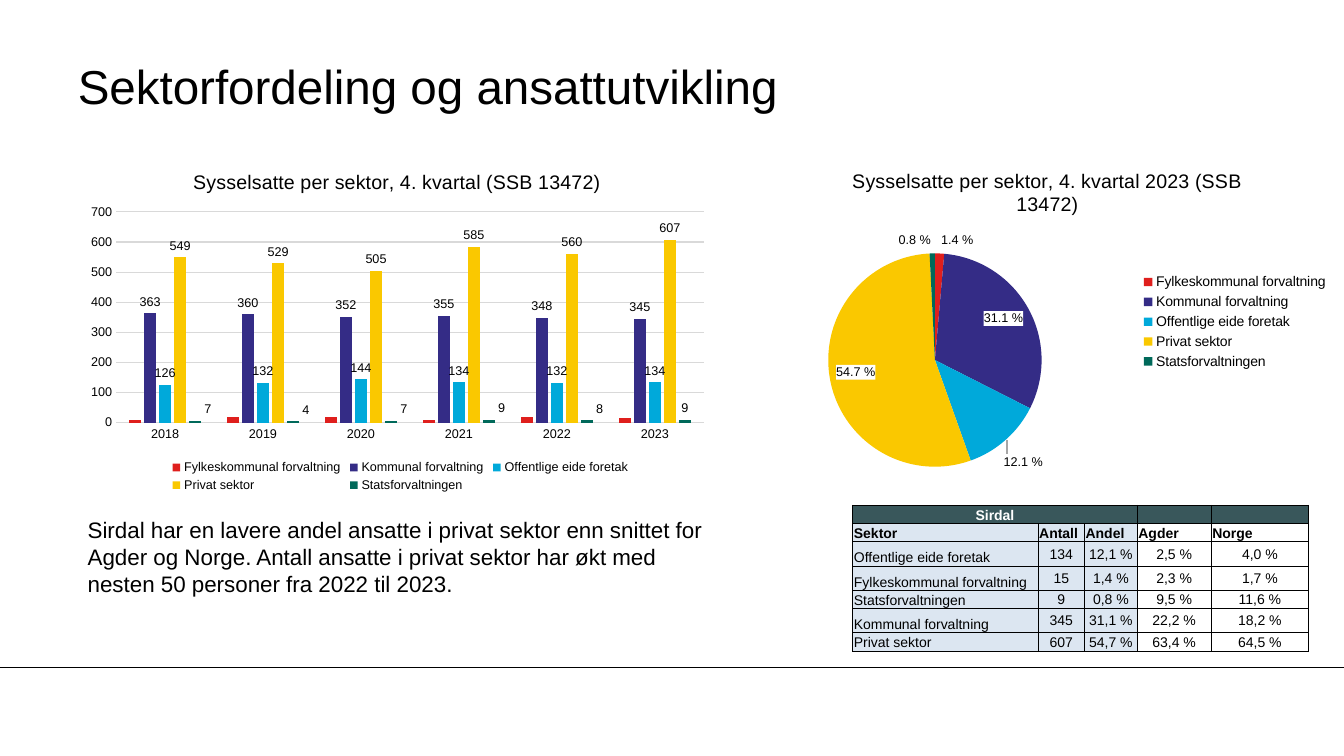
import pptx
import pptx.chart.data
import pptx.dml.color
import pptx.enum.chart
import pptx.enum.shapes
import pptx.enum.text
import pptx.oxml
import pptx.oxml.ns
import pptx.util
from pptx.util import Cm

FONT = "Arial"
BLACK, WHITE, GRID, HEADER, PALE = "000000", "FFFFFF", "D9D9D9", "39575B", "DCE6F1"
LEADER = "A6A6A6"
SECTOR_COLOURS = {
    "Fylkeskommunal forvaltning": "DF1F1D",
    "Kommunal forvaltning": "342C86",
    "Offentlige eide foretak": "00A9DA",
    "Privat sektor": "FAC800",
    "Statsforvaltningen": "00695A",
}
YEARS = ["2018", "2019", "2020", "2021", "2022", "2023"]
EMPLOYED = [
    [10, 20, 20, 10, 20, 15],
    [363, 360, 352, 355, 348, 345],
    [126, 132, 144, 134, 132, 134],
    [549, 529, 505, 585, 560, 607],
    [7, 4, 7, 9, 8, 9],
]
SHARES = [1.4, 31.1, 12.1, 54.7, 0.8]
SHARE_LABEL_SHIFTS = {0: (0.03, 0), 2: (-0.01, 0.03), 4: (-0.03, 0)}
SHARE_FORMAT = '0.0" %"'
SECTOR_ROWS = [
    ["Sirdal", "", "", "", ""],
    ["Sektor", "Antall", "Andel", "Agder", "Norge"],
    ["Offentlige eide foretak", "134", "12,1 %", "2,5 %", "4,0 %"],
    ["Fylkeskommunal forvaltning", "15", "1,4 %", "2,3 %", "1,7 %"],
    ["Statsforvaltningen", "9", "0,8 %", "9,5 %", "11,6 %"],
    ["Kommunal forvaltning", "345", "31,1 %", "22,2 %", "18,2 %"],
    ["Privat sektor", "607", "54,7 %", "63,4 %", "64,5 %"],
]
POSITION = pptx.enum.chart.XL_LABEL_POSITION


def colour(hex_string):
    return pptx.dml.color.RGBColor.from_string(hex_string)


def fill_with(part, hex_string):
    part.fill.solid()
    part.fill.fore_color.rgb = colour(hex_string)


def style_font(font, size, hex_string=BLACK, bold=False):
    font.name = FONT
    font.size = pptx.util.Pt(size)
    font.bold = bold
    font.color.rgb = colour(hex_string)


def add_run(paragraph, text, size, hex_string=BLACK, bold=False):
    run = paragraph.add_run()
    run.text = text
    style_font(run.font, size, hex_string, bold)


def add_rule(slide, start, end, hex_string):
    rule = slide.shapes.add_connector(
        pptx.enum.shapes.MSO_CONNECTOR.STRAIGHT, *start, *end)
    rule.line.color.rgb = colour(hex_string)
    rule.line.width = pptx.util.Pt(0.75)
    rule._element.spPr.append(xml("<a:effectLst></a:effectLst>"))


def xml(markup):
    return pptx.oxml.parse_xml(markup.replace(
        ">", f" {pptx.oxml.ns.nsdecls('a', 'c')}>", 1))


def manual_layout(x, y, size=None, inner=False):
    """Chart layout in fractions; without a size, x and y are offsets."""
    target = '<c:layoutTarget val="inner"/>' if inner else ""
    modes = '<c:xMode val="edge"/><c:yMode val="edge"/>' if size else ""
    extent = f'<c:w val="{size[0]}"/><c:h val="{size[1]}"/>' if size else ""
    return xml(f'<c:layout><c:manualLayout>{target}{modes}<c:x val="{x}"/>'
               f'<c:y val="{y}"/>{extent}</c:manualLayout></c:layout>')


def place_plot_and_legend(chart, plot, legend):
    plot_area = chart.element.find(".//" + pptx.oxml.ns.qn("c:plotArea"))
    for layout in plot_area.findall(pptx.oxml.ns.qn("c:layout")):
        plot_area.remove(layout)
    plot_area.insert(0, manual_layout(*plot, inner=True))
    chart.legend._element.find(pptx.oxml.ns.qn("c:legendPos")).addnext(
        manual_layout(*legend))


def add_sector_chart(slide, kind, box, data, title, legend_position, legend_size):
    chart = slide.shapes.add_chart(kind, *box, data).chart
    style_font(chart.font, 10)
    chart.has_title = True
    add_run(chart.chart_title.text_frame.paragraphs[0], title, 14)
    chart.has_legend = True
    chart.legend.position = legend_position
    chart.legend.include_in_layout = False
    style_font(chart.legend.font, legend_size)
    chart.plots[0].vary_by_categories = kind == pptx.enum.chart.XL_CHART_TYPE.PIE
    return chart


def show_values(series):
    """Show value labels without leader lines."""
    labels = series.data_labels
    labels.show_value = True
    style_font(labels.font, 9)
    for leader in labels._element.findall(pptx.oxml.ns.qn("c:showLeaderLines")):
        leader.set("val", "0")
    return labels


def place_label(series, index, position, shift=None, number_format=None, fill=None):
    """Give one point its own label, optionally shifted by a chart fraction."""
    label = series.points[index].data_label
    style_font(label.font, 9)
    label.position = position
    element = series.data_labels._element.findall(pptx.oxml.ns.qn("c:dLbl"))[-1]
    text_style = element.find(pptx.oxml.ns.qn("c:txPr"))
    for old in element.findall(pptx.oxml.ns.qn("c:spPr")):
        element.remove(old)
    if shift:
        element.insert(1, manual_layout(*shift))
    if number_format:
        number = xml('<c:numFmt sourceLinked="0"></c:numFmt>')
        number.set("formatCode", number_format)
        text_style.addprevious(number)
    if fill:
        text_style.addprevious(xml(
            f'<c:spPr><a:solidFill><a:srgbClr val="{fill}"/></a:solidFill></c:spPr>'))


def add_employment_chart(slide, box):
    data = pptx.chart.data.CategoryChartData(number_format="#,##0")
    data.categories = YEARS
    for sector, values in zip(SECTOR_COLOURS, EMPLOYED):
        data.add_series(sector, values)
    chart = add_sector_chart(
        slide, pptx.enum.chart.XL_CHART_TYPE.COLUMN_CLUSTERED, box, data,
        "Sysselsatte per sektor, 4. kvartal (SSB 13472)",
        pptx.enum.chart.XL_LEGEND_POSITION.BOTTOM, 9)
    place_plot_and_legend(chart, (0.06, 0.17, (0.92, 0.61)), (0.14, 0.88, (0.73, 0.11)))
    columns = chart.plots[0]
    columns.gap_width, columns.overlap = 219, -27
    for axis in (chart.category_axis, chart.value_axis):
        axis.major_tick_mark = pptx.enum.chart.XL_TICK_MARK.NONE
        style_font(axis.tick_labels.font, 9)
    chart.category_axis.format.line.color.rgb = colour(GRID)
    values = chart.value_axis
    values.format.line.fill.background()
    values.maximum_scale, values.major_unit = 700, 100
    values.major_gridlines.format.line.color.rgb = colour(GRID)
    values.major_gridlines.format.line.width = pptx.util.Pt(0.75)
    for number, (series, hex_string) in enumerate(
            zip(columns.series, SECTOR_COLOURS.values())):
        fill_with(series.format, hex_string)
        if number:
            show_values(series).position = POSITION.OUTSIDE_END
    for index in range(len(YEARS) - 1):
        place_label(columns.series[-1], index, POSITION.OUTSIDE_END, (0.02, 0))


def add_share_chart(slide, box):
    data = pptx.chart.data.CategoryChartData(number_format="0.0")
    data.categories = list(SECTOR_COLOURS)
    data.add_series("Andel", SHARES)
    chart = add_sector_chart(
        slide, pptx.enum.chart.XL_CHART_TYPE.PIE, box, data,
        "Sysselsatte per sektor, 4. kvartal 2023 (SSB 13472)",
        pptx.enum.chart.XL_LEGEND_POSITION.RIGHT, 10)
    place_plot_and_legend(chart, (0.12, 0.3, (0.37, 0.64)), (0.66, 0.35, (0.33, 0.31)))
    shares = chart.plots[0].series[0]
    labels = show_values(shares)
    labels.number_format = SHARE_FORMAT
    labels.number_format_is_linked = False
    for index, hex_string in enumerate(SECTOR_COLOURS.values()):
        fill_with(shares.points[index].format, hex_string)
        large = SHARES[index] > 20
        place_label(shares, index,
                    POSITION.INSIDE_END if large else POSITION.OUTSIDE_END,
                    SHARE_LABEL_SHIFTS.get(index), SHARE_FORMAT, WHITE)
    left, top, width, height = box
    leader_x = int(left + 0.43 * width)
    add_rule(slide, (leader_x, int(top + 0.86 * height)),
             (leader_x, int(top + 0.9 * height)), LEADER)


def add_borders(cell):
    properties = cell._tc.get_or_add_tcPr()
    for place, side in enumerate(("lnL", "lnR", "lnT", "lnB")):
        properties.insert(place, xml(
            f'<a:{side} w="6350"><a:solidFill><a:srgbClr val="{BLACK}"/>'
            f'</a:solidFill></a:{side}>'))


def add_sector_table(slide, left, top):
    widths = [4.67, 1.17, 1.33, 1.86, 2.46]
    heights = [0.46, 0.46, 0.61, 0.61, 0.46, 0.61, 0.46]
    table = slide.shapes.add_table(len(heights), len(widths), left, top,
                                   Cm(sum(widths)), Cm(sum(heights))).table
    for column, width in zip(table.columns, widths):
        column.width = Cm(width)
    for row, height in zip(table.rows, heights):
        row.height = Cm(height)
    for r, texts in enumerate(SECTOR_ROWS):
        for c, text in enumerate(texts):
            fill_sector_cell(table.cell(r, c), r, c, text)
    table.cell(0, 0).merge(table.cell(0, 2))


def fill_sector_cell(cell, r, c, text):
    cell.margin_left = cell.margin_right = cell.margin_top = Cm(0.03)
    cell.margin_bottom = 0
    is_figure = r > 1 and c > 0
    anchors = pptx.enum.text.MSO_ANCHOR
    cell.vertical_anchor = anchors.MIDDLE if is_figure else anchors.BOTTOM
    paragraph = cell.text_frame.paragraphs[0]
    if is_figure or r == 0:
        paragraph.alignment = pptx.enum.text.PP_ALIGN.CENTER
    if text:
        add_run(paragraph, text, 10, BLACK if r else WHITE, bold=r < 2)
    else:
        paragraph._p.get_or_add_endParaRPr().set("sz", "1000")
    if r and c > 2:
        cell.fill.background()
    else:
        fill_with(cell, PALE if r else HEADER)
    add_borders(cell)


def set_title(slide, left, top, width, height):
    title = slide.shapes.title
    title.left, title.top, title.width, title.height = left, top, width, height
    frame = title.text_frame
    frame.margin_left = frame.margin_right = frame.margin_top = frame.margin_bottom = 0
    frame.vertical_anchor = pptx.enum.text.MSO_ANCHOR.MIDDLE
    frame.paragraphs[0].alignment = pptx.enum.text.PP_ALIGN.LEFT
    add_run(frame.paragraphs[0], "Sektorfordeling og ansattutvikling", 34)


def add_comment(slide, *box):
    frame = slide.shapes.add_textbox(*box).text_frame
    frame.word_wrap = True
    add_run(frame.paragraphs[0],
            "Sirdal har en lavere andel ansatte i privat sektor enn snittet for Agder "
            "og Norge. Antall ansatte i privat sektor har økt med nesten 50 personer "
            "fra 2022 til 2023.", 16)


def main():
    deck = pptx.Presentation()
    deck.slide_width, deck.slide_height = Cm(33.87), Cm(19.05)
    slide = deck.slides.add_slide(deck.slide_layouts[5])
    left, footer_top = Cm(1.96), Cm(16.81)
    add_rule(slide, (0, footer_top), (deck.slide_width, footer_top), BLACK)
    set_title(slide, left, Cm(1.19), Cm(28.19), Cm(1.91))
    add_comment(slide, left, Cm(12.88), Cm(16.28), Cm(2.31))
    add_employment_chart(slide, (left, Cm(3.86), Cm(16.1), Cm(8.71)))
    add_share_chart(slide, (Cm(19.13), Cm(3.86), Cm(14.53), Cm(8.41)))
    add_sector_table(slide, Cm(21.49), Cm(12.73))
    deck.save("out.pptx")


if __name__ == "__main__":
    main()
